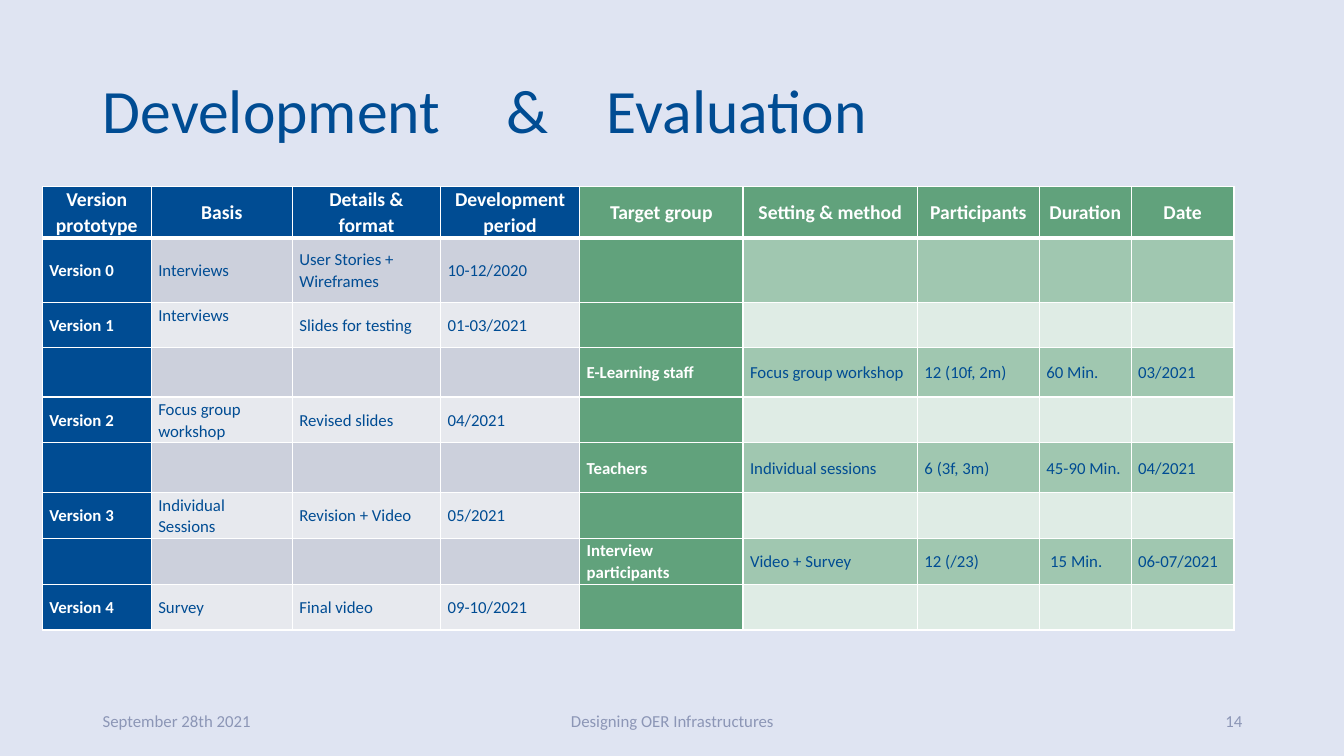
from pptx import Presentation
from pptx.dml.color import RGBColor
from pptx.enum.text import MSO_ANCHOR, MSO_AUTO_SIZE, PP_ALIGN
from pptx.oxml import parse_xml
from pptx.oxml.ns import nsdecls
from pptx.util import Inches, Pt

BLUE = RGBColor(0x00, 0x4C, 0x93)
GREEN = RGBColor(0x61, 0xA2, 0x7C)
WHITE = RGBColor(0xFF, 0xFF, 0xFF)
MUTED = RGBColor(0x8C, 0x96, 0xB6)
PAGE = RGBColor(0xDF, 0xE4, 0xF2)
# Band colours for odd and even rows
GREYS = RGBColor(0xCC, 0xD0, 0xDC), RGBColor(0xE7, 0xE9, 0xEE)
MINTS = RGBColor(0xA0, 0xC7, 0xB0), RGBColor(0xDF, 0xEC, 0xE5)


def write(frame, text, size=12, color=BLUE, bold=False,
          align=PP_ALIGN.LEFT, spacing=1.0, tabs=()):
    frame.word_wrap = True
    frame.vertical_anchor = MSO_ANCHOR.MIDDLE
    para = frame.paragraphs[0]
    para.alignment = align
    para.line_spacing = spacing
    if tabs:
        stops = "".join(f'<a:tab pos="{Inches(t)}" algn="l"/>' for t in tabs)
        para._p.get_or_add_pPr().append(
            parse_xml(f'<a:tabLst {nsdecls("a")}>{stops}</a:tabLst>'))
    run = para.add_run()
    run.text = text
    font = run.font
    font.name, font.size, font.bold = "Calibri", Pt(size), bold
    font.color.rgb = color


def border(cell, side, width):
    cell._tc.get_or_add_tcPr().append(parse_xml(
        f'<a:ln{side} {nsdecls("a")} w="{Pt(width)}"><a:solidFill>'
        f'<a:srgbClr val="{WHITE}"/></a:solidFill></a:ln{side}>'))


deck = Presentation()
deck.slide_width, deck.slide_height = Inches(13.33), Inches(7.5)
slide = deck.slides.add_slide(deck.slide_layouts[5])
slide.background.fill.solid()
slide.background.fill.fore_color.rgb = PAGE

# Title
title = slide.shapes.title
title.left, title.top = Inches(0.92), Inches(0.4)
title.width, title.height = Inches(11.5), Inches(1.45)
title.text_frame.auto_size = MSO_AUTO_SIZE.NONE
write(title.text_frame, "Development\t& \tEvaluation", size=44,
      spacing=0.9, tabs=(4, 5))

# Footer
for left, width, text, align in (
        (0.92, 3, "September 28th 2021", PP_ALIGN.LEFT),
        (4.42, 4.5, "Designing OER Infrastructures", PP_ALIGN.CENTER),
        (9.42, 3, "14", PP_ALIGN.RIGHT)):
    box = slide.shapes.add_textbox(
        Inches(left), Inches(6.95), Inches(width), Inches(0.4))
    write(box.text_frame, text, color=MUTED, align=align)

# Table content: development on the left, evaluation on the right
SPLIT = 4
NONE = [""] * SPLIT
REST = [""] * 5
rows = [
    ["Version prototype", "Basis", "Details & format", "Development period",
     "Target group", "Setting & method", "Participants", "Duration", "Date"],
    ["Version 0", "Interviews", "User Stories + Wireframes", "10-12/2020"] + REST,
    ["Version 1", "Interviews", "Slides for testing", "01-03/2021"] + REST,
    NONE + ["E-Learning staff", "Focus group workshop", "12 (10f, 2m)",
            "60 Min.", "03/2021"],
    ["Version 2", "Focus group workshop", "Revised slides", "04/2021"] + REST,
    NONE + ["Teachers", "Individual sessions", "6 (3f, 3m)",
            "45-90 Min.", "04/2021"],
    ["Version 3", "Individual Sessions", "Revision + Video", "05/2021"] + REST,
    NONE + ["Interview participants", "Video + Survey", "12 (/23)",
            " 15 Min.", "06-07/2021"],
    ["Version 4", "Survey", "Final video", "09-10/2021"] + REST,
]
widths = [1.08, 1.4, 1.47, 1.38, 1.62, 1.73, 1.21, 0.91, 1.02]
heights = [0.51, 0.64, 0.45, 0.49, 0.45, 0.5, 0.45, 0.46, 0.45]

# Table
table = slide.shapes.add_table(
    len(rows), len(widths), Inches(0.42), Inches(1.85),
    Inches(sum(widths)), Inches(sum(heights))).table
for col, width in zip(table.columns, widths):
    col.width = Inches(width)
for row, height in zip(table.rows, heights):
    row.height = Inches(height)

for r, texts in enumerate(rows):
    for c, text in enumerate(texts):
        cell = table.cell(r, c)
        head = r == 0
        strong = head or c in (0, SPLIT)
        main, bands = (BLUE, GREYS) if c < SPLIT else (GREEN, MINTS)
        cell.margin_left = cell.margin_right = Inches(0.07)
        cell.margin_top = cell.margin_bottom = 0
        cell.vertical_anchor = MSO_ANCHOR.MIDDLE
        for side in "LRTB":
            thick = (r, side) in ((0, "B"), (1, "T"))
            border(cell, side, 3 if thick else 1)
        cell.fill.solid()
        cell.fill.fore_color.rgb = main if strong else bands[(r - 1) % 2]
        if text:
            write(cell.text_frame, text, size=14 if head else 12,
                  color=WHITE if strong else BLUE, bold=strong,
                  align=PP_ALIGN.CENTER if head else PP_ALIGN.LEFT,
                  spacing=1.07)

# The basis of version 1 sits high in its cell
table.cell(2, 1).margin_bottom = Inches(0.2)

deck.save("out.pptx")
